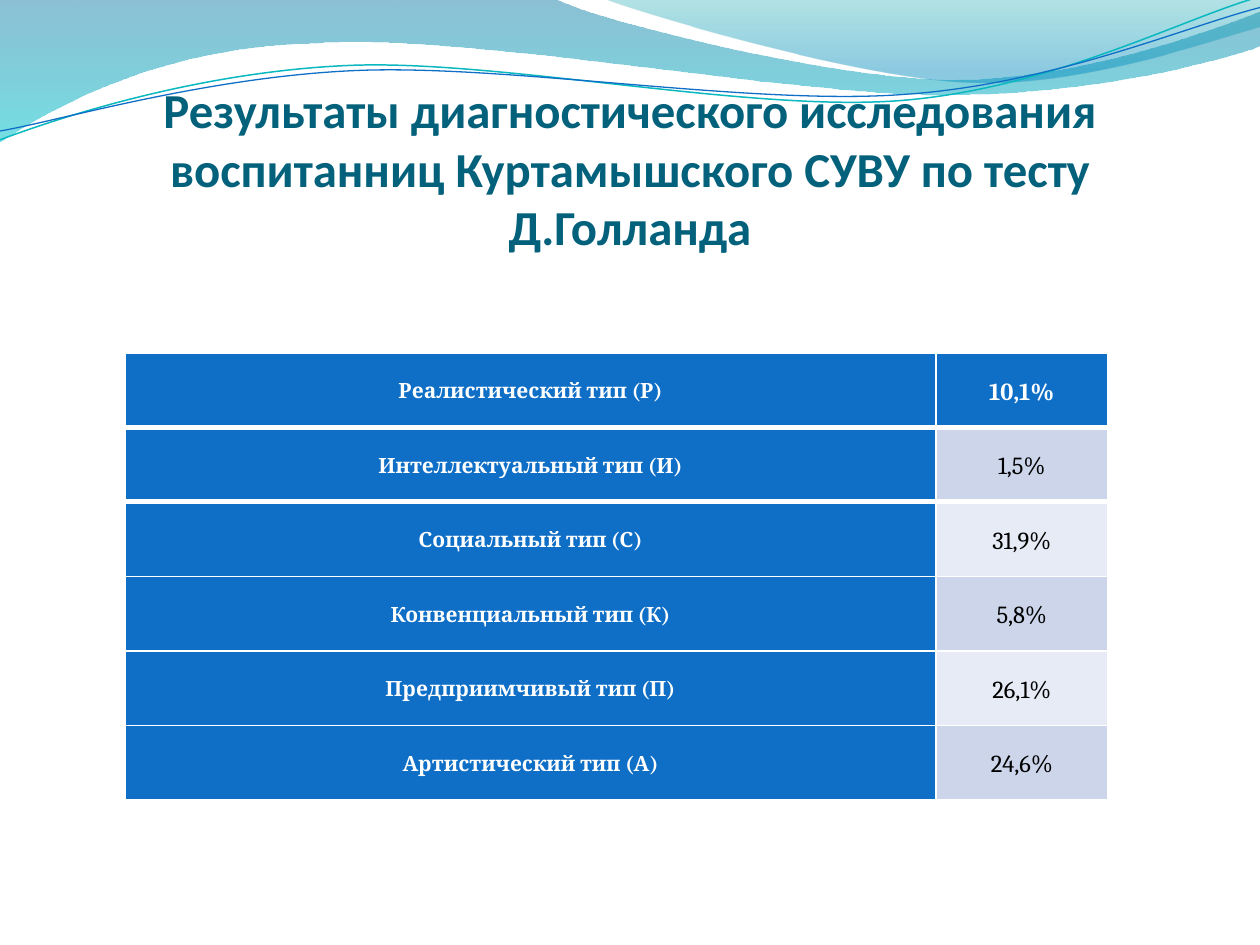
from dataclasses import dataclass

from lxml import etree
from pptx import Presentation, util as u
from pptx.dml.color import RGBColor
from pptx.enum import text as t
from pptx.oxml.ns import qn

COLS, ROWS = 10, 7.5
UNITS = 1000


@dataclass(frozen=True)
class Theme:
    head: str = "04617B"
    blue: str = "0F6FC6"
    teal: str = "0AB8BF"
    white: str = "FFFFFF"
    black: str = "000000"
    bands: tuple = ("E7EBF5", "CCD5EA")
    sans: str = "Calibri"
    serif: str = "Cambria"
    big: float = 27.9
    mid: float = 14
    small: float = 12


@dataclass(frozen=True)
class Stop:
    at: float
    color: str
    alpha: int


@dataclass(frozen=True)
class Wave:
    start: tuple
    segs: tuple
    stops: tuple = ()
    color: str = ""
    width: float = 0


@dataclass(frozen=True)
class Kind:
    name: str
    share: str


LOOK = Theme()

WAVES = (
    Wave((0, 0), (
        (4.4, -0.01),
        (4.76, 0.17, 6.64, 0.63, 7.58, 0.63),
        (8.53, 0.63, 9.58, 0.26, 10, 0.09),
        (10.01, 0.36),
        (9.83, 0.44, 8.7, 0.76, 7.46, 0.75),
        (6.22, 0.75, 3.82, 0.28, 2.57, 0.34),
        (1.29, 0.36, 0.46, 0.83, -0.01, 1.13),
    ), stops=(Stop(0, "0074A1", 45), Stop(1, "00C6CF", 55))),
    Wave((4.79, -0.01), (
        (5.09, 0.11, 6.82, 0.62, 7.69, 0.65),
        (8.56, 0.69, 9.61, 0.32, 10, 0.21),
        (10, 0),
    ), stops=(Stop(0, "00A1A9", 30), Stop(0.8, "008BBF", 45))),
    Wave((0, 1.11), (
        (0.48, 0.93, 1.58, 0.57, 2.77, 0.52),
        (3.95, 0.47, 5.93, 0.89, 7.13, 0.8),
        (8.33, 0.71, 9.38, 0.15, 9.98, -0.02),
    ), color=LOOK.teal, width=0.85),
    Wave((0, 1.04), (
        (0.47, 0.96, 1.64, 0.61, 2.83, 0.56),
        (4.03, 0.51, 5.97, 0.84, 7.17, 0.75),
        (8.36, 0.67, 9.41, 0.21, 10, 0.06),
    ), color=LOOK.blue, width=0.75),
)

KINDS = (
    Kind("Реалистический тип (Р)", "10,1%"),
    Kind("Интеллектуальный тип (И)", "1,5%"),
    Kind("Социальный тип (С)", "31,9%"),
    Kind("Конвенциальный тип (К)", "5,8%"),
    Kind("Предприимчивый тип (П)", "26,1%"),
    Kind("Артистический тип (А)", "24,6%"),
)


def rgb(code: str) -> RGBColor:
    return RGBColor.from_string(code)


def pairs(seg: tuple) -> list:
    return [(round(x * UNITS), round(y * UNITS))
            for x, y in zip(seg[::2], seg[1::2])]


def bend(shape, segs: tuple) -> None:
    lines = iter(list(shape._element.iter(qn("a:lnTo"))))
    for seg in segs:
        group = [next(lines) for _ in pairs(seg)]
        if len(group) == 1:
            continue
        curve = etree.Element(qn("a:cubicBezTo"))
        group[0].addprevious(curve)
        for line in group:
            curve.append(line[0])
            line.getparent().remove(line)


def shade(shape, stops: tuple) -> None:
    shape.fill.gradient()
    shape.fill.gradient_angle = 270
    for mark, stop in zip(shape.fill.gradient_stops, stops):
        mark.position = stop.at
        mark.color.rgb = rgb(stop.color)
    for node, stop in zip(shape._element.iter(qn("a:srgbClr")), stops):
        etree.SubElement(node, qn("a:alpha"), val=str(stop.alpha * 1000))


def draw_wave(slide, wave: Wave) -> None:
    start = pairs(wave.start)[0]
    dots = [dot for seg in wave.segs for dot in pairs(seg)]
    pen = slide.shapes.build_freeform(*start, scale=u.Inches(1) / UNITS)
    pen.add_line_segments(dots, close=bool(wave.stops))
    shape = pen.convert_to_shape()
    bend(shape, wave.segs)
    shape.shadow.inherit = False
    if wave.stops:
        shade(shape, wave.stops)
        shape.line.fill.background()
    else:
        shape.fill.background()
        shape.line.color.rgb = rgb(wave.color)
        shape.line.width = u.Pt(wave.width)


def style(para, face: str, size: float, color: str, bold: bool) -> None:
    para.alignment = t.PP_ALIGN.CENTER
    para.font.name = face
    para.font.size = u.Pt(size)
    para.font.color.rgb = rgb(color)
    para.font.bold = bold


def draw_title(slide, words: str) -> None:
    box = slide.shapes.title
    box.left, box.top, box.width, box.height = map(u.Inches, (0.5, 0.77, 9, 2.04))
    frame = box.text_frame
    frame.text = words
    frame.word_wrap = True
    frame.auto_size = t.MSO_AUTO_SIZE.NONE
    frame.vertical_anchor = t.MSO_ANCHOR.BOTTOM
    frame.margin_left = frame.margin_right = frame.margin_top = 0
    frame.margin_bottom = u.Inches(0.78)
    style(frame.paragraphs[0], LOOK.sans, LOOK.big, LOOK.head, True)
    slide.shapes._spTree.append(box._element)


def fill_cell(cell, words: str, back: str, size: float, color: str,
              bold: bool, gap: float) -> None:
    cell.text = words
    cell.vertical_anchor = t.MSO_ANCHOR.MIDDLE
    cell.margin_left = cell.margin_right = u.Inches(0.03)
    cell.margin_top = cell.margin_bottom = u.Inches(0.03)
    cell.fill.solid()
    cell.fill.fore_color.rgb = rgb(back)
    para = cell.text_frame.paragraphs[0]
    para.line_spacing = 1.15
    para.space_before = para.space_after = u.Pt(gap)
    style(para, LOOK.serif, size, color, bold)


def rule(cell, side: str) -> None:
    edge = etree.Element(qn(side), w=str(u.Pt(3)))
    fill = etree.SubElement(edge, qn("a:solidFill"))
    etree.SubElement(fill, qn("a:srgbClr"), val=LOOK.white)
    cell._tc.get_or_add_tcPr().insert(0, edge)


def draw_table(slide, kinds: tuple) -> None:
    spot = map(u.Inches, (0.99, 2.8, 7.8, 3.55))
    grid = slide.shapes.add_table(len(kinds), 2, *spot).table
    grid.first_col = True
    for col, width in zip(grid.columns, (6.44, 1.36)):
        col.width = u.Inches(width)
    for row, kind in enumerate(kinds):
        top = row == 0
        fill_cell(grid.cell(row, 0), kind.name, LOOK.blue, LOOK.small,
                  LOOK.white, True, 0)
        fill_cell(grid.cell(row, 1), kind.share,
                  LOOK.blue if top else LOOK.bands[row % 2], LOOK.mid,
                  LOOK.white if top else LOOK.black, top, 4.5)
    for col in range(2):
        rule(grid.cell(0, col), "a:lnB")
        rule(grid.cell(1, col), "a:lnT")


def main() -> None:
    deck = Presentation()
    deck.slide_width, deck.slide_height = u.Inches(COLS), u.Inches(ROWS)
    slide = deck.slides.add_slide(deck.slide_layouts[5])
    for wave in WAVES:
        draw_wave(slide, wave)
    draw_title(slide, "Результаты диагностического исследования воспитанниц "
                      "Куртамышского СУВУ по тесту Д.Голланда")
    draw_table(slide, KINDS)
    deck.save("out.pptx")


if __name__ == "__main__":
    main()
